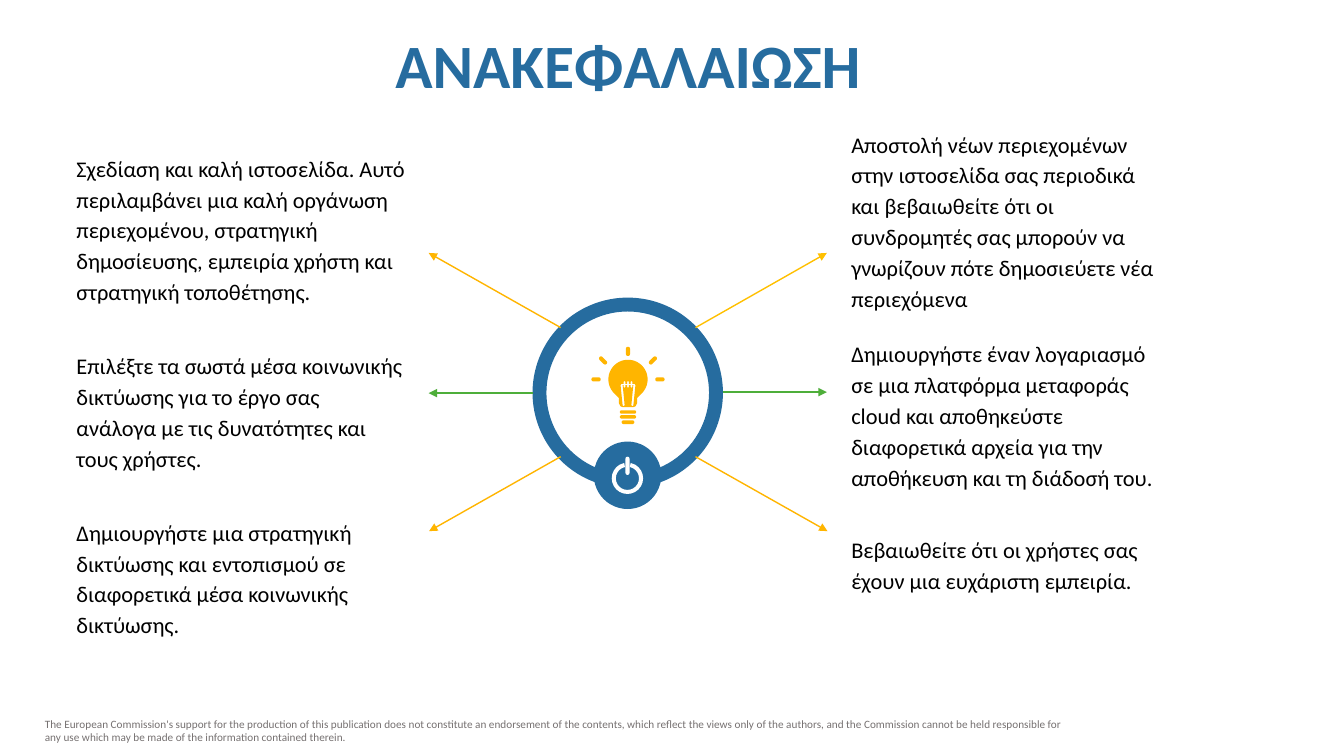
import math

import pptx
import pptx.dml.color
import pptx.enum.shapes
import pptx.enum.text
import pptx.oxml
import pptx.util

Pt = pptx.util.Pt
RGB = pptx.dml.color.RGBColor
KIND = pptx.enum.shapes.MSO_SHAPE
ANCHOR = pptx.enum.text.MSO_ANCHOR
ALIGN = pptx.enum.text.PP_ALIGN
FIT = pptx.enum.text.MSO_AUTO_SIZE

BLUE = RGB(0x26, 0x6C, 0x9F)
AMBER = RGB(0xFF, 0xB5, 0x00)
GOLD = RGB(0xFF, 0xC0, 0x00)
GREEN = RGB(0x4E, 0xAE, 0x3A)
GREY = RGB(0x76, 0x71, 0x71)
BLACK = RGB(0, 0, 0)
WHITE = RGB(0xFF, 0xFF, 0xFF)

deck = pptx.Presentation()
deck.slide_width, deck.slide_height = Pt(960), Pt(540)
slide = deck.slides.add_slide(deck.slide_layouts[6])
shapes = slide.shapes


def add_text(box, text, color, frame, para, font):
    """Add a text box, with format values for its frame, paragraph and font."""
    body = shapes.add_textbox(*map(Pt, box)).text_frame
    body.word_wrap = True
    line = body.paragraphs[0]
    line.text = text
    for part, style in ((body, frame), (line, para), (line.font, font)):
        for key, value in style.items():
            setattr(part, key, value)
    line.font.name = "Calibri"
    line.font.color.rgb = color


def paint(solid, color):
    """Give a shape a plain fill, with no outline or shadow."""
    solid.shadow.inherit = False
    solid.fill.solid()
    solid.fill.fore_color.rgb = color
    solid.line.fill.background()


# Footer and title
add_text(
    (25, 508.6, 753.1, 26.6),
    "The European Commission's support for the production of this publication "
    "does not constitute an endorsement of the contents, which reflect the views "
    "only of the authors, and the Commission cannot be held responsible for any "
    "use which may be made of the information contained therein.",
    GREY, {"auto_size": FIT.SHAPE_TO_FIT_TEXT}, {}, {"size": Pt(8)})
add_text(
    (206.6, 22, 484.6, 56.9), "ΑΝΑΚΕΦΑΛΑΙΩΣΗ", BLUE, {},
    {"alignment": ALIGN.CENTER, "line_spacing": 0.9},
    {"size": Pt(44), "bold": True})

# Ring and power button
solids = [
    (KIND.DONUT, (380.4, 212.6, 136, 136), BLUE, [0.073]),
    (KIND.OVAL, (424.2, 315.4, 48.2, 48.2), BLUE, []),
    (KIND.BLOCK_ARC, (437, 330.5, 22.4, 22.4), WHITE, [282 * 0.6, 258 * 0.6, 0.13]),
    (KIND.ROUNDED_RECTANGLE, (446.8, 326.2, 2.9, 13), WHITE, [0.5]),
]
for kind, box, color, adjust in solids:
    solid = shapes.add_shape(kind, *map(Pt, box))
    paint(solid, color)
    for index, value in enumerate(adjust):
        solid.adjustments[index] = value

# Light bulb: outlines in points around the centre of the glass
MID, TOP = 448.6, 271
glass = [(14 * math.cos(math.radians(a)), 14 * math.sin(math.radians(a)))
         for a in range(135, 406, 5)]
neck = [(6.5, 13.4), (6.5, 17), (5.4, 19.2), (3.6, 19.9)]
coil = [(0, 1.1), (0.7, 1.8), (0.7, 3.3), (1.8, 3.3), (1.8, 1.8), (2.5, 1.1),
        (3.2, 1.8), (3.2, 3.3), (4.7, 3.3), (5.3, 4), (3.8, 18.8), (3, 19.2),
        (2.4, 18.4), (3.8, 4.1), (3.2, 4.1), (3.2, 5.4), (2.5, 6.1), (1.8, 5.4),
        (1.8, 4.1), (0.7, 4.1), (0.7, 5.4), (0, 6.1)]
loops = [glass + neck + [(-x, y) for x, y in reversed(neck)],
         coil + [(-x, y) for x, y in reversed(coil)]]

# Base bars and rays: centre, length, width and turn of round-ended strokes
strokes = [(0, 23.3, 11.6, 2.4, 0), (0, 26.8, 11.6, 2.4, 0), (0, 30.6, 9, 2.7, 0),
           (0, -20, 6.6, 2.9, 90), (-22.8, 0, 6.6, 2.9, 0), (22.8, 0, 6.6, 2.9, 0),
           (-17.8, -13.5, 7, 2.9, 45), (17.8, -13.5, 7, 2.9, -45)]
for x, y, size, wide, turn in strokes:
    loop = []
    for side in (0, 180):
        way = math.radians(turn + side)
        reach = (size - wide) / 2
        for step in range(-90, 91, 15):
            angle = way + math.radians(step)
            loop.append((x + reach * math.cos(way) + wide / 2 * math.cos(angle),
                         y + reach * math.sin(way) + wide / 2 * math.sin(angle)))
    loops.append(loop)

# One shape, drawn in hundredths of a point
pen = None
for loop in loops:
    first, *rest = [((MID + x) * 100, (TOP + y) * 100) for x, y in loop]
    if pen is None:
        pen = shapes.build_freeform(*first, scale=127)
    else:
        pen.move_to(*first)
    pen.add_line_segments(rest, close=True)
paint(pen.convert_to_shape(), AMBER)

# Arrows from the ring
arrows = [
    (380.4, 280.8, 306.2, 280.8, GREEN), (516.4, 280.1, 590.6, 280.1, GREEN),
    (400.5, 234, 306.2, 180.7, AMBER), (496.8, 234, 590.6, 180.7, GOLD),
    (496.8, 326.2, 591.1, 379.4, AMBER), (400.5, 326.2, 306.5, 379.4, AMBER),
]
for *ends, color in arrows:
    arrow = shapes.add_connector(
        pptx.enum.shapes.MSO_CONNECTOR.STRAIGHT, *map(Pt, ends))
    arrow.line.color.rgb = color
    arrow.line.width = Pt(1)
    props = arrow._element.spPr
    stroke = arrow.line._get_or_add_ln()
    tip = stroke.makeelement(pptx.oxml.ns.qn("a:tailEnd"), {"type": "triangle"})
    stroke.append(tip)
    props.append(props.makeelement(pptx.oxml.ns.qn("a:effectLst")))

# Summary points in two columns
LEFT, RIGHT = 47.5, 601
points = [
    (LEFT, 103.4, 253.4, 118.8,
     "Σχεδίαση και καλή ιστοσελίδα. Αυτό περιλαμβάνει μια καλή οργάνωση "
     "περιεχομένου, στρατηγική δημοσίευσης, εμπειρία χρήστη και στρατηγική "
     "τοποθέτησης."),
    (LEFT, 245.5, 248.4, 95,
     "Επιλέξτε τα σωστά μέσα κοινωνικής δικτύωσης για το έργο σας ανάλογα με τις "
     "δυνατότητες και τους χρήστες."),
    (LEFT, 364.3, 253.4, 95,
     "Δημιουργήστε μια στρατηγική δικτύωσης και εντοπισμού σε διαφορετικά μέσα "
     "κοινωνικής δικτύωσης."),
    (RIGHT, 86.8, 237.6, 139.7,
     "Αποστολή νέων περιεχομένων στην ιστοσελίδα σας περιοδικά και βεβαιωθείτε "
     "ότι οι συνδρομητές σας μπορούν να γνωρίζουν πότε δημοσιεύετε νέα "
     "περιεχόμενα"),
    (RIGHT, 236.9, 237.6, 117.4,
     "Δημιουργήστε έναν λογαριασμό σε μια πλατφόρμα μεταφοράς cloud και "
     "αποθηκεύστε διαφορετικά αρχεία για την αποθήκευση και τη διάδοσή του."),
    (RIGHT, 376.3, 237.6, 51.8,
     "Βεβαιωθείτε ότι οι χρήστες σας έχουν μια ευχάριστη εμπειρία."),
]
for *box, text in points:
    add_text(box, text, BLACK,
             {"vertical_anchor": ANCHOR.MIDDLE, "auto_size": FIT.SHAPE_TO_FIT_TEXT},
             {"line_spacing": 1.15}, {"size": Pt(16)})

deck.save("out.pptx")
